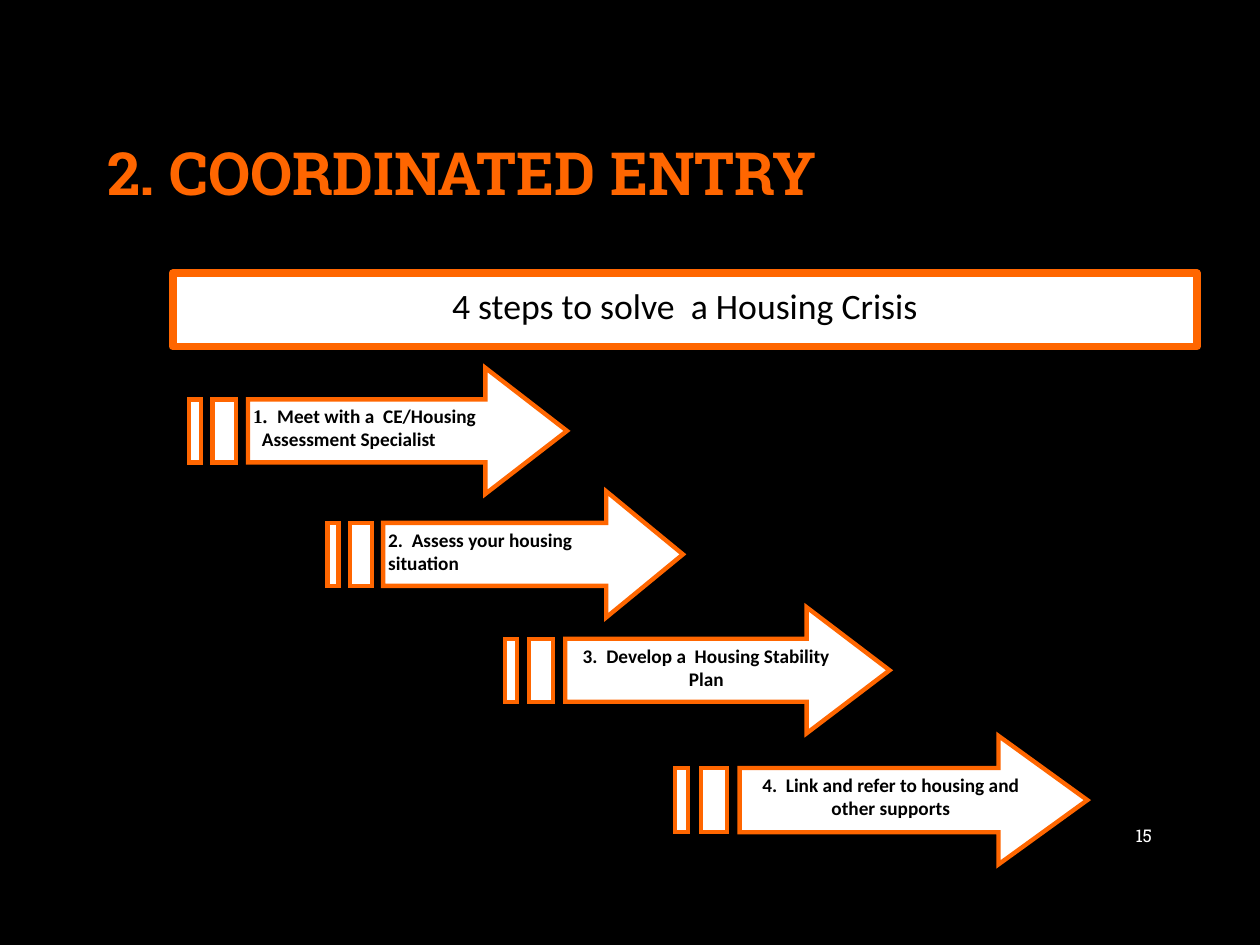
"""Build the coordinated entry slide with four stepped arrows."""
from dataclasses import dataclass

from lxml.etree import SubElement
from pptx import Presentation
from pptx.dml.color import RGBColor
from pptx.enum.shapes import MSO_SHAPE
from pptx.enum.text import MSO_ANCHOR, PP_ALIGN
from pptx.oxml.ns import qn
from pptx.util import Inches, Pt


@dataclass(frozen=True)
class Theme:
    black: RGBColor = RGBColor(0, 0, 0)
    white: RGBColor = RGBColor(255, 255, 255)
    orange: RGBColor = RGBColor(255, 102, 0)
    slab: str = "Roboto Slab"
    sans: str = "Calibri"
    serif: str = "Times New Roman"
    title: float = 34
    banner: float = 20.4
    step: float = 11
    number: float = 10


theme = Theme()


def write(shape, *texts, fonts=(theme.sans,), size=theme.step, color=theme.black,
          bold=False, align=PP_ALIGN.LEFT, anchor=MSO_ANCHOR.TOP,
          margins=(0.1, 0.05, 0.1, 0.05), before=0, after=0, spacing=1.0, hang=0):
    frame = shape.text_frame
    frame.word_wrap = True
    frame.vertical_anchor = anchor
    (frame.margin_left, frame.margin_top,
     frame.margin_right, frame.margin_bottom) = map(Inches, margins)
    paragraph = frame.paragraphs[0]
    paragraph.alignment = align
    paragraph.line_spacing = spacing
    paragraph.space_before, paragraph.space_after = Pt(before), Pt(after)
    if hang:
        properties = paragraph._p.get_or_add_pPr()
        properties.set("marL", str(Inches(hang)))
        properties.set("indent", str(-Inches(hang)))
    for text, font in zip(texts, fonts):
        for index, line in enumerate(text.split("\n")):
            if index:
                paragraph.add_line_break()
            run = paragraph.add_run()
            run.text = line
            run.font.name, run.font.size, run.font.bold = font, Pt(size), bold
            run.font.color.rgb = color


def outline(shape, width, join):
    shape.shadow.inherit = False
    shape.fill.solid()
    shape.fill.fore_color.rgb = theme.white
    shape.line.color.rgb = theme.orange
    shape.line.width = Pt(width)
    SubElement(shape.line._get_or_add_ln(), qn(f"a:{join}"))


deck = Presentation()
deck.slide_width, deck.slide_height = Inches(10), Inches(7.5)
slide = deck.slides.add_slide(deck.slide_layouts[5])
slide.background.fill.solid()
slide.background.fill.fore_color.rgb = theme.black

heading = slide.shapes.title
heading.left, heading.top, heading.width, heading.height = map(Inches, (0.75, 0.67, 8.49, 1.45))
write(heading, "2. COORDINATED ENTRY", fonts=(theme.slab,), size=theme.title,
      color=theme.orange, bold=True, anchor=MSO_ANCHOR.MIDDLE, spacing=0.9)

banner = slide.shapes.add_shape(MSO_SHAPE.RECTANGLE, *map(Inches, (1.37, 2.17, 8.13, 0.58)))
outline(banner, 4.5, "round")
write(banner, "4 steps to solve  a Housing Crisis", size=theme.banner,
      align=PP_ALIGN.CENTER, before=10, after=8, spacing=1.1)

page_number = slide.shapes.add_textbox(*map(Inches, (8.62, 6.43, 0.62, 0.4)))
write(page_number, "15", fonts=(theme.slab,), size=theme.number, color=theme.white,
      align=PP_ALIGN.RIGHT, anchor=MSO_ANCHOR.MIDDLE)

GRID = 320
TOP, BOTTOM = GRID // 4, GRID * 3 // 4
BODY, NECK = GRID * 5 // 32, 251
ARROW = [(NECK, 0), (NECK, TOP), (BODY, TOP), (BODY, BOTTOM),
         (NECK, BOTTOM), (NECK, GRID), (GRID, GRID // 2)]
STRIPES = [[(left, TOP), (left, BOTTOM), (right, BOTTOM), (right, TOP)]
           for left, right in ((GRID // 16, GRID // 8), (0, GRID // 32))]

steps = [
    (1.5, 2.92, 3, 1, ("1.  ", "Meet with a  CE/Housing\nAssessment Specialist"),
     (theme.serif, theme.sans), PP_ALIGN.LEFT, 0.07),
    (2.6, 3.9, 2.82, 1, ("2.  Assess your housing situation",),
     (theme.sans,), PP_ALIGN.LEFT, 0),
    (4.01, 4.82, 3.05, 1, ("3.  Develop a  Housing Stability Plan",),
     (theme.sans,), PP_ALIGN.CENTER, 0),
    (5.36, 5.84, 3.27, 1.02, ("4.  Link and refer to housing and other supports",),
     (theme.sans,), PP_ALIGN.CENTER, 0),
]
for left, top, width, height, texts, fonts, align, hang in steps:
    builder = slide.shapes.build_freeform(
        *ARROW[0], scale=(Inches(width) / GRID, Inches(height) / GRID))
    builder.add_line_segments(ARROW[1:], close=True)
    for stripe in STRIPES:
        builder.move_to(*stripe[0])
        builder.add_line_segments(stripe[1:], close=True)
    step = builder.convert_to_shape(Inches(left), Inches(top))
    outline(step, 2.5, "miter")
    write(step, *texts, fonts=fonts, bold=True, align=align, after=8, hang=hang,
          margins=(width * BODY / GRID + 0.04, height / 4 + 0.04,
                   width * 0.11 + 0.04, height / 4 + 0.04))

deck.save("out.pptx")
